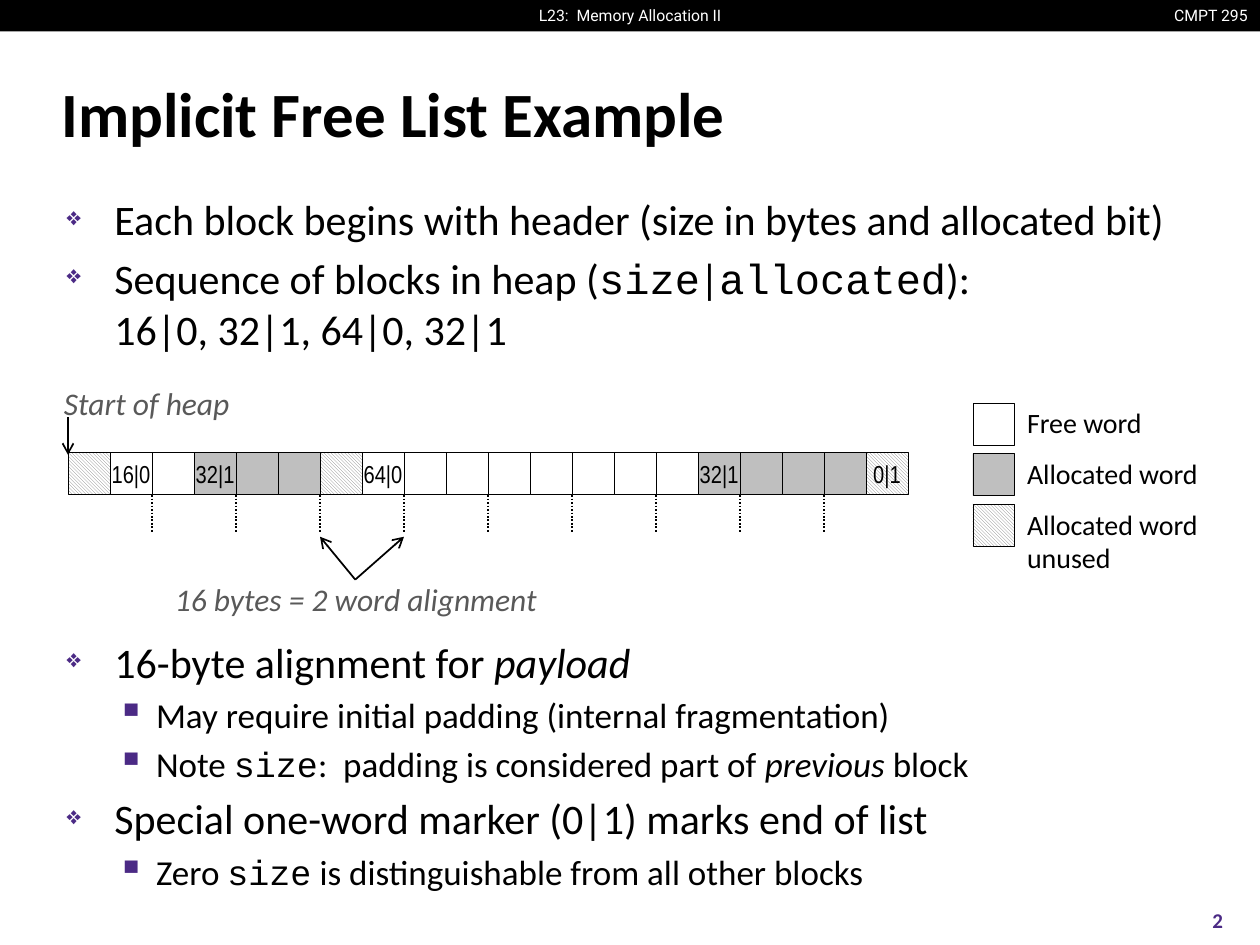
from lxml import etree
from pptx import Presentation
from pptx.dml.color import RGBColor
from pptx.enum.dml import MSO_LINE, MSO_PATTERN
from pptx.enum.shapes import MSO_CONNECTOR, MSO_SHAPE
from pptx.enum.text import MSO_ANCHOR, PP_ALIGN
from pptx.oxml.ns import qn
from pptx.util import Inches, Pt

RECT, STRAIGHT = MSO_SHAPE.RECTANGLE, MSO_CONNECTOR.STRAIGHT
HATCH, DOTTED = MSO_PATTERN.LIGHT_DOWNWARD_DIAGONAL, MSO_LINE.ROUND_DOT
LEFT, CENTER, RIGHT = PP_ALIGN.LEFT, PP_ALIGN.CENTER, PP_ALIGN.RIGHT
TOP, MIDDLE = MSO_ANCHOR.TOP, MSO_ANCHOR.MIDDLE

BLACK, WHITE, PURPLE, GRAY = "000000", "FFFFFF", "4B2A85", "595959"
WORD_FILLS = {"free": WHITE, "allocated": "BFBFBF", "unused": None}
SANS, MONO = "Calibri", "Courier New"

LEVELS = [
    dict(size=24, margin=0.38, indent=-0.38, bullet="❖", bullet_size=60),
    dict(size=20, margin=0.71, indent=-0.31, bullet="▪", bullet_size=110),
]
INTRO = [
    (0, [("Each block begins with header (size in bytes and allocated bit)", "")]),
    (0, [("Sequence of blocks in heap (", ""), ("size", "mono"), ("|", ""),
         ("allocated", "mono"), ("): ", ""), ("\n", ""),
         ("16|0, 32|1, 64|0, 32|1", "")]),
]
NOTES = [
    (0, [("16-byte alignment for ", ""), ("payload", "italic")]),
    (1, [("May require initial padding (internal fragmentation)", "")]),
    (1, [("Note ", ""), ("size", "mono"), (":  padding is considered part of ", ""),
         ("previous", "italic"), (" block", "")]),
    (0, [("Special one-word marker (0|1) marks end of list", "")]),
    (1, [("Zero ", ""), ("size", "mono"),
         (" is distinguishable from all other blocks", "")]),
]
HEAP = [
    ("unused", 1, ""), ("free", 2, "16|0"), ("allocated", 3, "32|1"),
    ("unused", 1, ""), ("free", 8, "64|0"), ("allocated", 4, "32|1"),
    ("unused", 1, "0|1"),
]
LEGEND = [
    ("free", "Free word", 0.33),
    ("allocated", "Allocated word", 0.33),
    ("unused", "Allocated word\nunused", 0.6),
]

WORD = 1 / 3
HEAP_LEFT, HEAP_TOP = 0.54, 3.59
LEGEND_LEFT, LEGEND_TOP, LEGEND_STEP = 7.72, 3.2, 0.4
TICK_TOP, TICK_BOTTOM = 3.93, 4.23
ALIGNED_WORDS = range(2, 19, 2)
ALIGNMENT_ENDS = (6, 8)

prs = Presentation()
prs.slide_width, prs.slide_height = Inches(10), Inches(7.5)
slide = prs.slides.add_slide(prs.slide_layouts[6])


def color(value):
    return RGBColor.from_string(value)


def style(font, size, fill=BLACK, face=SANS, bold=False, italic=False):
    font.size, font.name, font.bold, font.italic = Pt(size), face, bold, italic
    font.color.rgb = color(fill)


def set_frame(frame, insets=(0.1, 0.05), anchor=TOP, wrap=True):
    frame.word_wrap, frame.vertical_anchor = wrap, anchor
    frame.margin_left = frame.margin_right = Inches(insets[0])
    frame.margin_top = frame.margin_bottom = Inches(insets[1])


def add_label(text, box, size, align=LEFT, spacing=None, insets=(0.1, 0.05),
              anchor=TOP, wrap=True, **look):
    frame = slide.shapes.add_textbox(*map(Inches, box)).text_frame
    set_frame(frame, insets, anchor, wrap)
    paragraph = frame.paragraphs[0]
    paragraph.text = text
    paragraph.alignment, paragraph.line_spacing = align, spacing
    for run in paragraph.runs:
        style(run.font, size, **look)


def add_bullet(paragraph, level):
    props = paragraph._p.get_or_add_pPr()
    props.set("marL", str(Inches(level["margin"])))
    props.set("indent", str(Inches(level["indent"])))
    bullet_color = etree.SubElement(props, qn("a:buClr"))
    etree.SubElement(bullet_color, qn("a:srgbClr"), val=PURPLE)
    etree.SubElement(props, qn("a:buSzPct"), val=str(level["bullet_size"] * 1000))
    etree.SubElement(props, qn("a:buChar"), char=level["bullet"])


def add_bullets(items, box):
    frame = slide.shapes.add_textbox(*map(Inches, box)).text_frame
    set_frame(frame)
    for index, (depth, pieces) in enumerate(items):
        paragraph = frame.add_paragraph() if index else frame.paragraphs[0]
        level = LEVELS[depth]
        paragraph.level = depth
        paragraph.space_before = Pt(level["size"] * 0.2)
        add_bullet(paragraph, level)
        for text, kind in pieces:
            if text == "\n":
                paragraph.add_line_break()
                continue
            run = paragraph.add_run()
            run.text = text
            style(run.font, level["size"], face=MONO if kind == "mono" else SANS,
                  italic=kind == "italic")


def add_word(kind, left, top, header=""):
    word = slide.shapes.add_shape(RECT, *map(Inches, (left, top, WORD, WORD)))
    word.shadow.inherit = False
    word.line.color.rgb, word.line.width = color(BLACK), Pt(0.25)
    if WORD_FILLS[kind]:
        word.fill.solid()
        word.fill.fore_color.rgb = color(WORD_FILLS[kind])
    else:
        word.fill.patterned()
        word.fill.pattern = HATCH
        word.fill.fore_color.rgb = color("808080")
        word.fill.back_color.rgb = color(WHITE)
    if header:
        set_frame(word.text_frame, (0, 0.05), MIDDLE, wrap=False)
        paragraph = word.text_frame.paragraphs[0]
        paragraph.text, paragraph.alignment = header, CENTER
        style(paragraph.runs[0].font, 14, face="Arial Narrow")


def add_line(start, end, dash=None, arrow=False):
    line = slide.shapes.add_connector(STRAIGHT, *map(Inches, (*start, *end)))
    line.line.color.rgb, line.line.width = color(BLACK), Pt(1)
    if dash:
        line.line.dash_style = dash
    if arrow:
        etree.SubElement(line.line._get_or_add_ln(), qn("a:tailEnd"), type="arrow")
    etree.SubElement(line._element.spPr, qn("a:effectLst"))


def word_left(index):
    return HEAP_LEFT + index * WORD


banner = slide.shapes.add_shape(RECT, 0, 0, prs.slide_width, Inches(0.25))
banner.shadow.inherit = False
banner.fill.solid()
banner.fill.fore_color.rgb = color(BLACK)
banner.line.fill.background()
banner_look = dict(size=9, fill=WHITE, face="Roboto", wrap=False)
add_label("CMPT 295", (9.19, 0, 0.81, 0.25), align=RIGHT, **banner_look)
add_label("L23:  Memory Allocation II", (4.17, 0, 1.66, 0.25), align=CENTER,
          **banner_look)

add_label("Implicit Free List Example", (0.39, 0.48, 9.19, 0.83), 36,
          anchor=MIDDLE, bold=True)
add_bullets(INTRO, (0.43, 1.49, 9.15, 1.3))
add_bullets(NOTES, (0.43, 5, 9.15, 2.3))
add_label("2", (9.33, 7.1, 0.67, 0.4), 12, align=CENTER, anchor=MIDDLE,
          fill=PURPLE, bold=True)

position = 0
for kind, count, header in HEAP:
    for offset in range(count):
        add_word(kind, word_left(position), HEAP_TOP, "" if offset else header)
        position += 1

for row, (kind, meaning, height) in enumerate(LEGEND):
    top = LEGEND_TOP + row * LEGEND_STEP
    add_word(kind, LEGEND_LEFT, top)
    add_label(meaning, (LEGEND_LEFT + WORD, top, 1.8, height), 16, spacing=0.98,
              insets=(0.1, 0), anchor=MIDDLE, wrap=False)

for index in ALIGNED_WORDS:
    add_line((word_left(index), TICK_TOP), (word_left(index), TICK_BOTTOM), DOTTED)
for index in ALIGNMENT_ENDS:
    add_line((2.82, 4.6), (word_left(index), 4.26), arrow=True)
add_line((HEAP_LEFT, 3.31), (HEAP_LEFT, 3.61), arrow=True)

add_label("Start of heap", (0.41, 3, 1.53, 0.4), 18, wrap=False, fill=GRAY,
          italic=True)
add_label("16 bytes = 2 word alignment", (1.28, 4.6, 3.09, 0.3), 18, align=CENTER,
          insets=(0, 0), fill=GRAY, italic=True)

prs.save("out.pptx")
